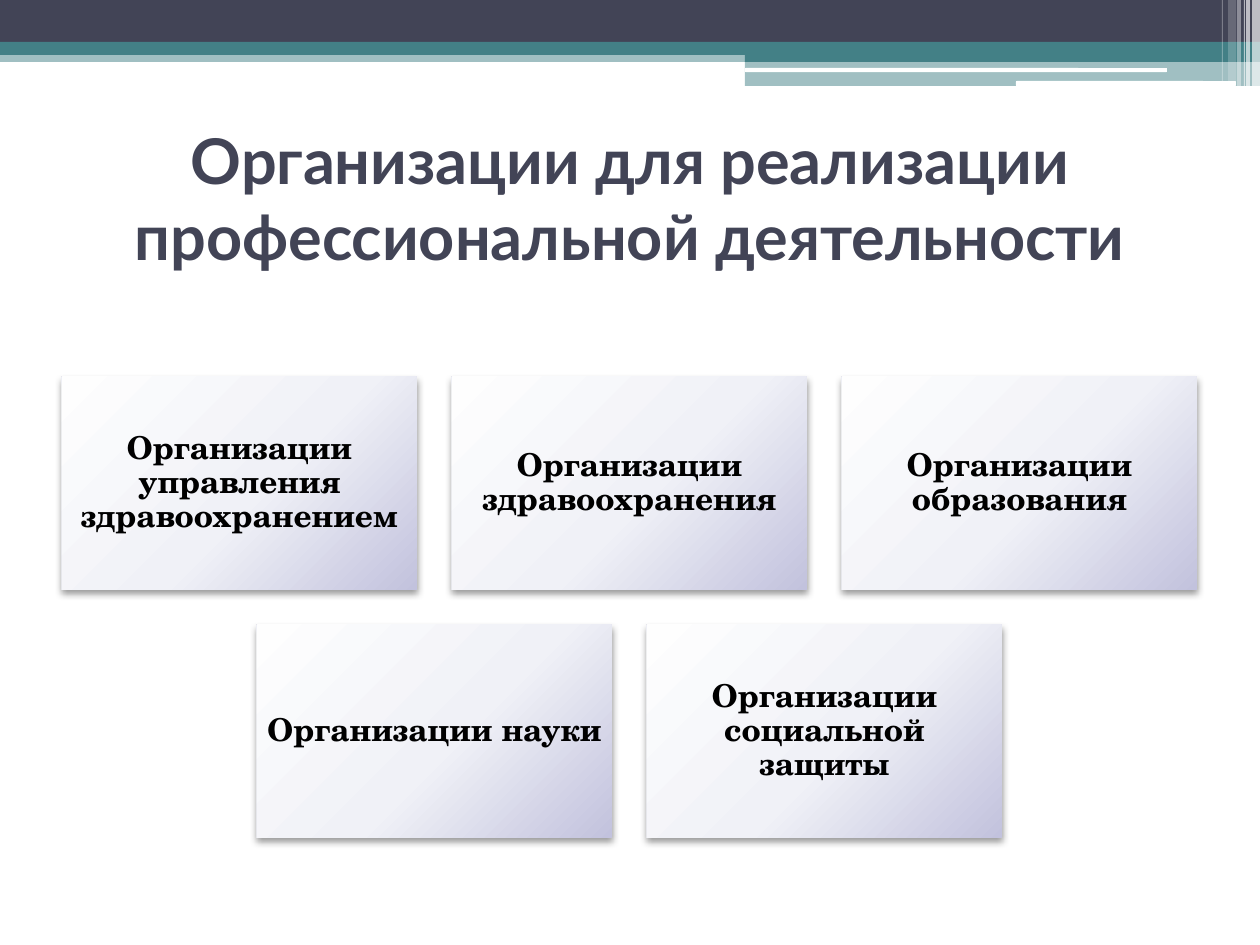
from lxml import etree
from pptx import Presentation
from pptx.dml.color import RGBColor
from pptx.enum.shapes import MSO_SHAPE as Shape
from pptx.enum.text import MSO_ANCHOR as Anchor, PP_ALIGN as Align
from pptx.oxml import parse_xml
from pptx.oxml.ns import qn
from pptx.util import Emu, Pt

PX = 914400 / 126
COLORS = {"ink": "424456", "teal": "438086", "white": "FFFFFF", "black": "000000",
          "card_light": "FEFEFE", "card_mid": "F0F1F7", "card_lilac": "C2C2DD"}
CARD_ROWS = [
    ["Организации управления здравоохранением",
     "Организации здравоохранения",
     "Организации образования"],
    ["Организации науки", "Организации социальной защиты"],
]
DRAWING_NS = "http://schemas.openxmlformats.org/drawingml/2006/main"


def px(length):
    return Emu(round(length * PX))


def add_color(parent, color, alpha=100):
    node = etree.SubElement(parent, qn("a:srgbClr"), val=COLORS[color])
    if alpha < 100:
        etree.SubElement(node, qn("a:alpha"), val=str(alpha * 1000))


def add_block(slide, left, top, width, height, color, alpha=100, kind=Shape.RECTANGLE):
    block = slide.shapes.add_shape(kind, px(left), px(top), px(width), px(height))
    block.shadow.inherit = False
    block.line.fill.background()
    block.fill.solid()
    block.fill.fore_color.rgb = RGBColor.from_string(COLORS[color])
    if alpha < 100:
        solid = block.fill._xPr.find(qn("a:solidFill"))
        etree.SubElement(solid[0], qn("a:alpha"), val=str(alpha * 1000))
    return block


def write_text(shape, text, *, font, size, color, inset=None, line_spacing=None):
    frame = shape.text_frame
    frame.word_wrap = True
    frame.vertical_anchor = Anchor.MIDDLE
    if inset is not None:
        frame.margin_left = frame.margin_right = px(inset)
        frame.margin_top = frame.margin_bottom = px(inset)
    paragraph = frame.paragraphs[0]
    paragraph.alignment = Align.CENTER
    if line_spacing:
        paragraph.line_spacing = line_spacing
    run = paragraph.add_run()
    run.text = text
    run.font.name, run.font.size, run.font.bold = font, Pt(size), True
    run.font.color.rgb = RGBColor.from_string(COLORS[color])


def add_header(slide, left, top, width):
    split = 745
    # Full-width bands
    for y, height, color, alpha in [(50, 12, "teal", 50), (0, 42, "ink", 100),
                                    (42, 13, "teal", 100)]:
        add_block(slide, left, top + y, width, height, color, alpha)
    # Deeper bands on the right
    for y, height, alpha in [(49, 13, 100), (61, 25, 50)]:
        add_block(slide, left + split, top + y, width - split, height, "teal", alpha)
    # White rounded strokes
    for x, y, length, height in [(split, 68, 422, 4), (1016, 81, 220, 5)]:
        add_block(slide, left + x, top + y, length, height, "white",
                  kind=Shape.ROUNDED_RECTANGLE)
    # Translucent stripes, measured back from the right edge
    for back, stripe, height, alpha in [(8, 8, 86, 65), (14, 4, 86, 65), (16, 1, 86, 60),
                                        (23, 4, 86, 40), (32, 8, 81, 20), (38, 1, 81, 30)]:
        add_block(slide, left + width - back, top, stripe, height, "white", alpha)


def add_title(slide, left, top, width, height):
    title = slide.shapes.add_textbox(px(left), px(top), px(width), px(height))
    write_text(title, "Организации для реализации профессиональной деятельности",
               font="Lato", size=36, color="ink")


def add_card(slide, left, top, width, height, text):
    card = add_block(slide, left, top, width, height, "card_light")
    # Radial gradient centred beyond the top left corner
    gradient = parse_xml(
        f'<a:gradFill xmlns:a="{DRAWING_NS}" rotWithShape="1"><a:gsLst/>'
        '<a:path path="circle"><a:fillToRect l="-40000" t="-90000" r="140000" b="190000"/>'
        '</a:path></a:gradFill>')
    for position, color in [(0, "card_light"), (55, "card_mid"), (100, "card_lilac")]:
        add_color(etree.SubElement(gradient[0], qn("a:gs"), pos=str(position * 1000)), color)
    properties = card.fill._xPr
    properties.replace(properties.find(qn("a:solidFill")), gradient)
    # Soft shadow falling downwards
    shadow = etree.SubElement(properties.find(qn("a:effectLst")), qn("a:outerShdw"),
                              blurRad=str(Pt(4.1)), dist=str(Pt(2)), dir="5400000",
                              rotWithShape="0")
    add_color(shadow, "black", 40)
    write_text(card, text, font="TeX Gyre Schola", size=18, color="black",
               inset=9, line_spacing=0.9)


def add_card_grid(slide, left, top, width, height, rows, gap=35):
    columns = max(len(row) for row in rows)
    card_width = (width - gap * (columns - 1)) // columns
    card_height = (height - gap * (len(rows) - 1)) // len(rows)
    for row_index, row in enumerate(rows):
        row_width = len(row) * (card_width + gap) - gap
        row_left = left + (width - row_width) // 2
        for column, text in enumerate(row):
            add_card(slide, row_left + column * (card_width + gap),
                     top + row_index * (card_height + gap), card_width, card_height, text)


def main():
    deck = Presentation()
    deck.slide_width, deck.slide_height = px(1260), px(945)
    slide = deck.slides.add_slide(deck.slide_layouts[6])
    add_header(slide, 0, 0, 1260)
    add_title(slide, 63, 119, 1134, 157)
    add_card_grid(slide, 62, 377, 1135, 461, CARD_ROWS)
    deck.save("out.pptx")


if __name__ == "__main__":
    main()
